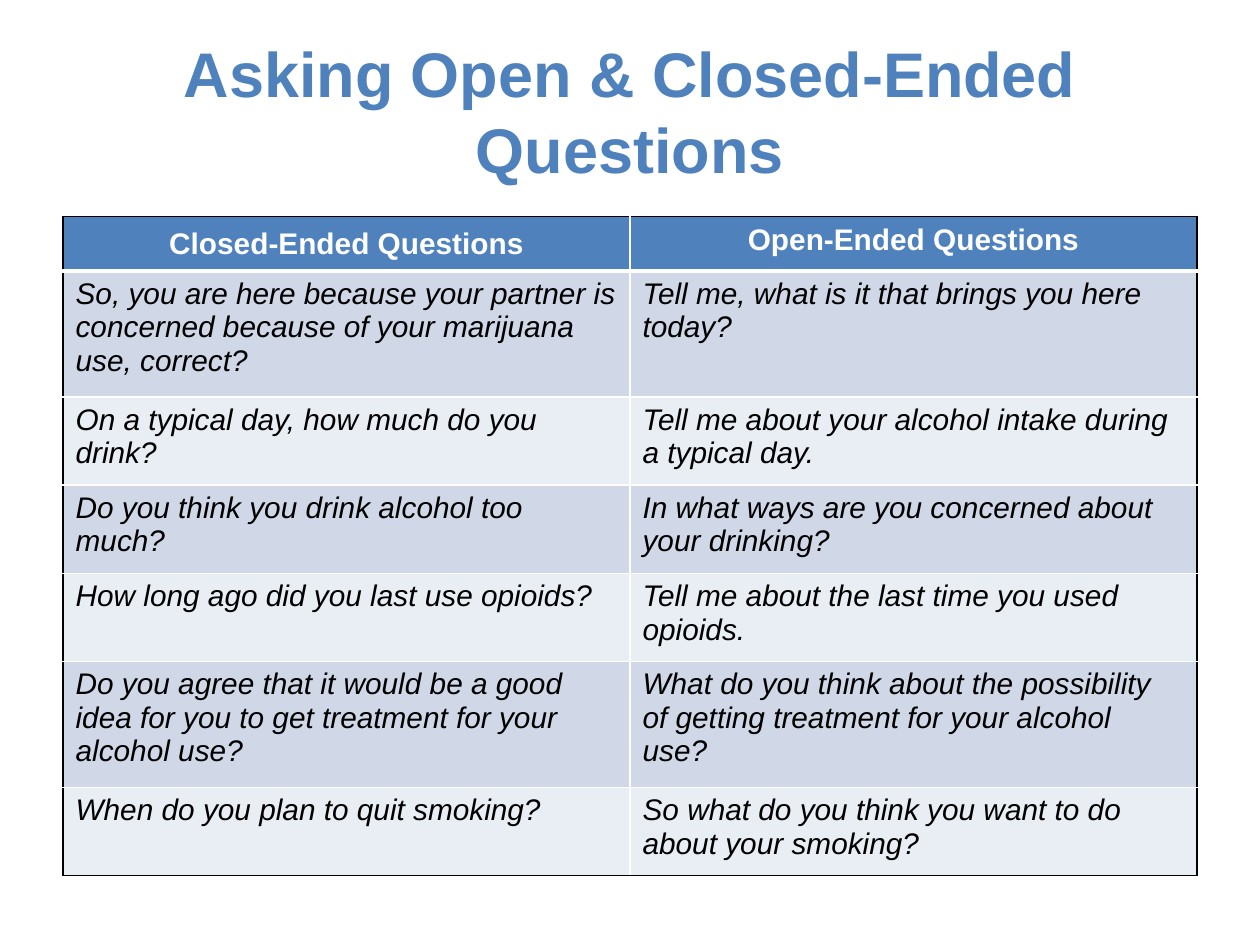
from pptx import Presentation
from pptx.dml.color import RGBColor
from pptx.enum.text import MSO_ANCHOR, PP_ALIGN
from pptx.oxml.ns import qn
from pptx.util import Inches, Pt
from lxml.etree import SubElement

FONT = "Arial"
COLORS = {
    "blue": "4F81BD",
    "band_dark": "D0D8E8",
    "band_light": "E9EDF4",
    "white": "FFFFFF",
    "black": "000000",
}
HEADINGS = ("Closed-Ended Questions", "Open-Ended Questions")
QUESTION_PAIRS = [
    ("So, you are here because your partner is concerned because of your marijuana use, correct?",
     "Tell me, what is it that brings you here today?"),
    ("On a typical day, how much do you drink?",
     "Tell me about your alcohol intake during a typical day."),
    ("Do you think you drink alcohol too much?",
     "In what ways are you concerned about your drinking?"),
    ("How long ago did you last use opioids?",
     "Tell me about the last time you used opioids."),
    ("Do you agree that it would be a good idea for you to get treatment for your alcohol use?",
     "What do you think about the possibility of getting treatment for your alcohol use?"),
    ("When do you plan to quit smoking?",
     "So what do you think you want to do about your smoking?"),
]
ROW_HEIGHTS = (0.43, 1, 0.7, 0.7, 0.7, 1, 0.7)


def rgb(name):
    return RGBColor.from_string(COLORS[name])


def write(frame, text, size, color, align=PP_ALIGN.LEFT, bold=False, italic=False):
    paragraph = frame.paragraphs[0]
    paragraph.alignment = align
    paragraph.space_before = Pt(0)
    run = paragraph.add_run()
    run.text = text
    font = run.font
    font.name, font.size = FONT, Pt(size)
    font.bold, font.italic = bold, italic
    font.color.rgb = rgb(color)


def set_borders(cell, borders):
    """Draw (side, color, points) borders; call before setting the cell's fill."""
    properties = cell._tc.get_or_add_tcPr()
    for side, color, points in borders:
        line = SubElement(properties, qn(f"a:ln{side}"), w=str(Pt(points)))
        fill = SubElement(line, qn("a:solidFill"))
        SubElement(fill, qn("a:srgbClr"), val=COLORS[color])


def add_title(slide, left, top, width, height):
    title = slide.shapes.title
    title.left, title.top, title.width, title.height = left, top, width, height
    frame = title.text_frame
    frame.word_wrap = True
    frame.vertical_anchor = MSO_ANCHOR.MIDDLE
    write(frame, "Asking Open & Closed-Ended Questions", 36, "blue",
          PP_ALIGN.CENTER, bold=True)


def add_question_table(slide, left, top, width, height):
    rows = [HEADINGS, *QUESTION_PAIRS]
    last_row, last_column = len(rows) - 1, len(HEADINGS) - 1
    table = slide.shapes.add_table(len(rows), len(HEADINGS), left, top, width, height).table
    for row, row_height in zip(table.rows, ROW_HEIGHTS):
        row.height = Inches(row_height)

    for r, texts in enumerate(rows):
        is_heading = r == 0
        for c, text in enumerate(texts):
            cell = table.cell(r, c)
            set_borders(cell, [
                ("L", "black" if c == 0 else "white", 1),
                ("R", "black" if c == last_column else "white", 1),
                ("T", "black" if is_heading else "white", 3 if r == 1 else 1),
                ("B", "black" if r == last_row else "white", 3 if is_heading else 1),
            ])
            cell.fill.solid()
            if is_heading:
                cell.fill.fore_color.rgb = rgb("blue")
                write(cell.text_frame, text, 17, "white", PP_ALIGN.CENTER, bold=True)
            else:
                cell.fill.fore_color.rgb = rgb("band_dark" if r % 2 else "band_light")
                write(cell.text_frame, text, 17, "black", italic=True)
    table.cell(0, 0).vertical_anchor = MSO_ANCHOR.MIDDLE


def main():
    deck = Presentation()
    deck.slide_width, deck.slide_height = Inches(10), Inches(7.5)
    slide = deck.slides.add_slide(deck.slide_layouts[5])
    add_title(slide, Inches(0.5), Inches(0.25), Inches(9), Inches(1.25))
    add_question_table(slide, Inches(0.5), Inches(1.72), Inches(9), Inches(sum(ROW_HEIGHTS)))
    deck.save("out.pptx")


if __name__ == "__main__":
    main()
